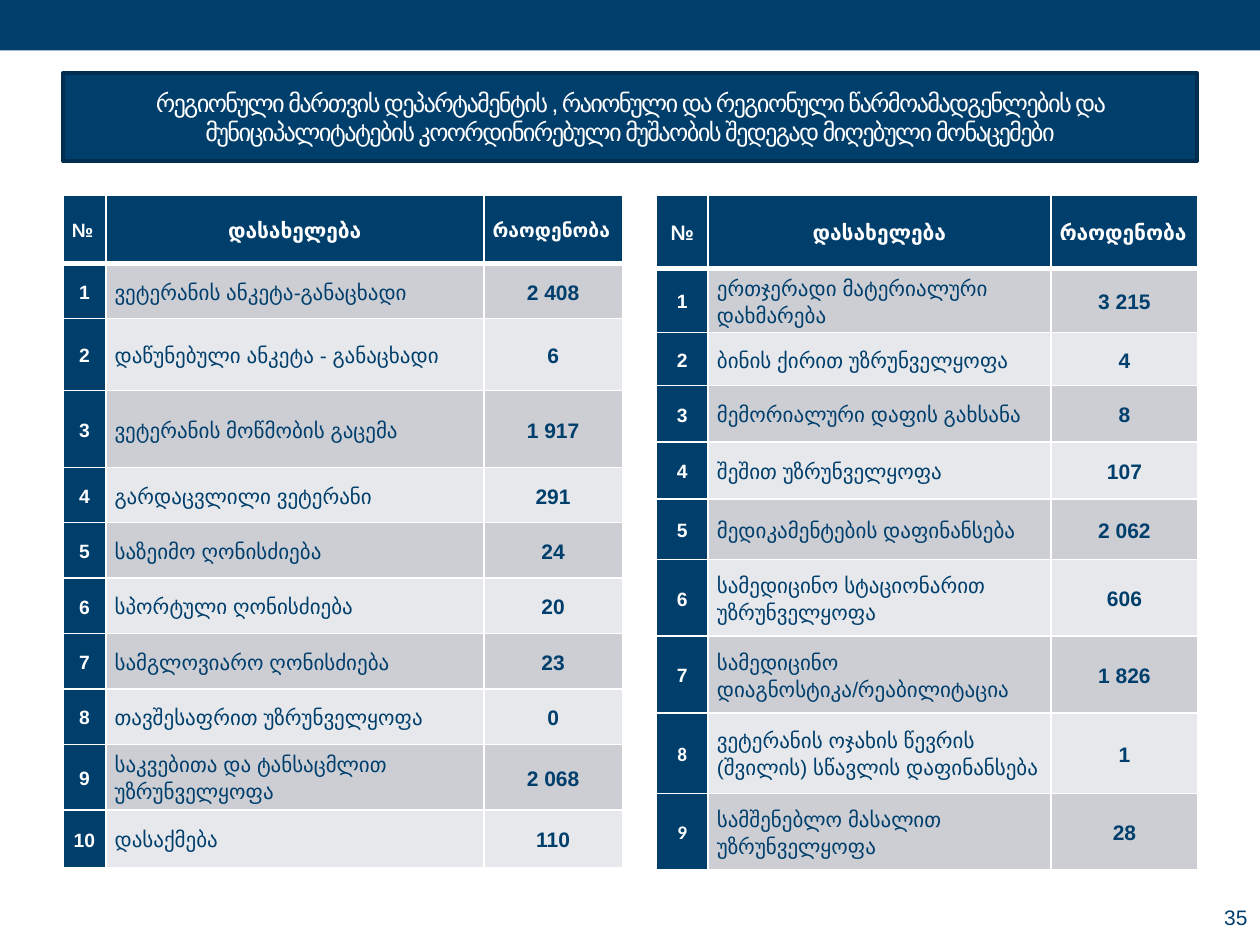
import lxml.etree
import pptx
import pptx.dml.color
import pptx.enum.shapes
import pptx.enum.text
import pptx.oxml.ns
import pptx.util

Inches = pptx.util.Inches
Pt = pptx.util.Pt
ALIGN = pptx.enum.text.PP_ALIGN
MIDDLE = pptx.enum.text.MSO_ANCHOR.MIDDLE
COLORS = {"navy": "003E6C", "edge": "002E50", "white": "FFFFFF",
          "dark_band": "CCCED4", "light_band": "E7E8EB"}
CELL_FORMAT = {"vertical_anchor": MIDDLE, "margin_left": Inches(0.07),
               "margin_right": Inches(0.07), "margin_top": 0, "margin_bottom": 0}

TITLE = ("რეგიონული მართვის დეპარტამენტის , რაიონული და რეგიონული წარმოამადგენლების და "
         "მუნიციპალიტატების კოორდინირებული მუშაობის შედეგად მიღებული მონაცემები")
HEADERS = ("№", "დასახელება", "რაოდენობა")
# Each row: name, amount, height in inches
ACTIVITIES = [
    ("ვეტერანის ანკეტა-განაცხადი", "2 408", 0.44),
    ("დაწუნებული ანკეტა - განაცხადი", "6", 0.57),
    ("ვეტერანის მოწმობის გაცემა", "1 917", 0.61),
    ("გარდაცვლილი ვეტერანი", "291", 0.44),
    ("საზეიმო ღონისძიება", "24", 0.44),
    ("სპორტული ღონისძიება", "20", 0.44),
    ("სამგლოვიარო ღონისძიება", "23", 0.44),
    ("თავშესაფრით უზრუნველყოფა", "0", 0.44),
    ("საკვებითა და ტანსაცმლით უზრუნველყოფა", "2 068", 0.52),
    ("დასაქმება", "110", 0.46),
]
SUPPORT = [
    ("ერთჯერადი მატერიალური დახმარება", "3 215", 0.51),
    ("ბინის ქირით უზრუნველყოფა", "4", 0.42),
    ("მემორიალური დაფის გახსანა", "8", 0.45),
    ("შეშით უზრუნველყოფა", "107", 0.45),
    ("მედიკამენტების დაფინანსება", "2 062", 0.48),
    ("სამედიცინო სტაციონარით უზრუნველყოფა", "606", 0.61),
    ("სამედიცინო დიაგნოსტიკა/რეაბილიტაცია", "1 826", 0.61),
    ("ვეტერანის ოჯახის წევრის (შვილის) სწავლის დაფინანსება", "1", 0.64),
    ("სამშენებლო მასალით უზრუნველყოფა", "28", 0.6),
]


def rgb(name):
    return pptx.dml.color.RGBColor.from_string(COLORS[name])


def apply(target, values):
    for name, value in values.items():
        setattr(target, name, value)


def set_borders(cell, top=1, bottom=1):
    """Draw white cell borders, with widths in points."""
    properties = cell._tc.get_or_add_tcPr()
    for tag, width in (("a:lnL", 1), ("a:lnR", 1), ("a:lnT", top), ("a:lnB", bottom)):
        line = lxml.etree.SubElement(properties, pptx.oxml.ns.qn(tag), w=str(Pt(width)))
        fill = lxml.etree.SubElement(line, pptx.oxml.ns.qn("a:solidFill"))
        lxml.etree.SubElement(fill, pptx.oxml.ns.qn("a:srgbClr"), val=COLORS["white"])


class SlideBuilder:
    def __init__(self, slide, font="Arial"):
        self.slide = slide
        self.font = font

    def add_run(self, frame, text, size, color, align, bold=False, font=None, spacing=None):
        paragraph = frame.paragraphs[0]
        apply(paragraph, {"alignment": align, "line_spacing": spacing})
        run = paragraph.add_run()
        run.text = text
        apply(run.font, {"name": font or self.font, "size": Pt(size), "bold": bold})
        run.font.color.rgb = rgb(color)
        return run

    def place(self, shape, box):
        apply(shape, dict(zip(("left", "top", "width", "height"), map(Inches, box))))

    def bar(self, box):
        shape = self.slide.shapes.add_shape(
            pptx.enum.shapes.MSO_SHAPE.RECTANGLE, *map(Inches, box))
        shape.shadow.inherit = False
        shape.fill.solid()
        shape.fill.fore_color.rgb = rgb("navy")
        shape.line.fill.background()

    def title(self, text, box):
        shape = self.slide.shapes.title
        self.place(shape, box)
        shape.fill.solid()
        shape.fill.fore_color.rgb = rgb("navy")
        shape.line.color.rgb = rgb("edge")
        shape.line.width = Pt(2)
        apply(shape.text_frame, {"word_wrap": True, "vertical_anchor": MIDDLE,
                                 "auto_size": pptx.enum.text.MSO_AUTO_SIZE.NONE})
        run = self.add_run(shape.text_frame, text, 14, "white", ALIGN.CENTER)
        run.font._element.set("spc", "-100")

    def text(self, text, box, align):
        frame = self.slide.shapes.add_textbox(*map(Inches, box)).text_frame
        apply(frame, {"word_wrap": True, "vertical_anchor": MIDDLE})
        self.add_run(frame, text, 12, "navy", align)

    def cell(self, cell, text, fill, size, color, align, bold, font=None, top=1, bottom=1):
        apply(cell, CELL_FORMAT)
        set_borders(cell, top, bottom)
        cell.fill.solid()
        cell.fill.fore_color.rgb = rgb(fill)
        self.add_run(cell.text_frame, text, size, color, align, bold, font, 1.15)

    def table(self, left, widths, header_height, header_sizes, header_aligns,
              rows, calibri_numbers=()):
        heights = [header_height] + [row[2] for row in rows]
        box = (left, 1.55, sum(widths), sum(heights))
        table = self.slide.shapes.add_table(
            len(heights), len(widths), *map(Inches, box)).table
        for column, width in zip(table.columns, widths):
            column.width = Inches(width)
        for row, height in zip(table.rows, heights):
            row.height = Inches(height)
        for column, header in enumerate(HEADERS):
            self.cell(table.cell(0, column), header, "navy", header_sizes[column],
                      "white", header_aligns[column], True, bottom=3)
        for number, (name, amount, _) in enumerate(rows, 1):
            band = "dark_band" if number % 2 else "light_band"
            top = 3 if number == 1 else 1
            font = "Calibri" if number in calibri_numbers else None
            self.cell(table.cell(number, 0), str(number), "navy", 11, "white",
                      ALIGN.CENTER, True, font, top)
            self.cell(table.cell(number, 1), name, band, 12, "navy",
                      ALIGN.LEFT, False, top=top)
            self.cell(table.cell(number, 2), amount, band, 12, "navy",
                      ALIGN.CENTER, True, top=top)


def main():
    presentation = pptx.Presentation()
    apply(presentation, {"slide_width": Inches(10), "slide_height": Inches(7.5)})
    builder = SlideBuilder(presentation.slides.add_slide(presentation.slide_layouts[5]))
    builder.bar((0, 0, 10, 0.4))
    builder.title(TITLE, (0.5, 0.58, 9, 0.7))
    builder.table(0.5, (0.34, 3, 1.1), 0.54, (11, 12, 11),
                  (ALIGN.LEFT, ALIGN.CENTER, ALIGN.LEFT), ACTIVITIES)
    builder.table(5.21, (0.41, 2.72, 1.17), 0.58, (12, 12, 12),
                  (ALIGN.CENTER, ALIGN.CENTER, ALIGN.LEFT), SUPPORT, calibri_numbers=(8, 9))
    builder.text("35", (8.83, 7.1, 1.17, 0.36), ALIGN.RIGHT)
    presentation.save("out.pptx")


if __name__ == "__main__":
    main()
